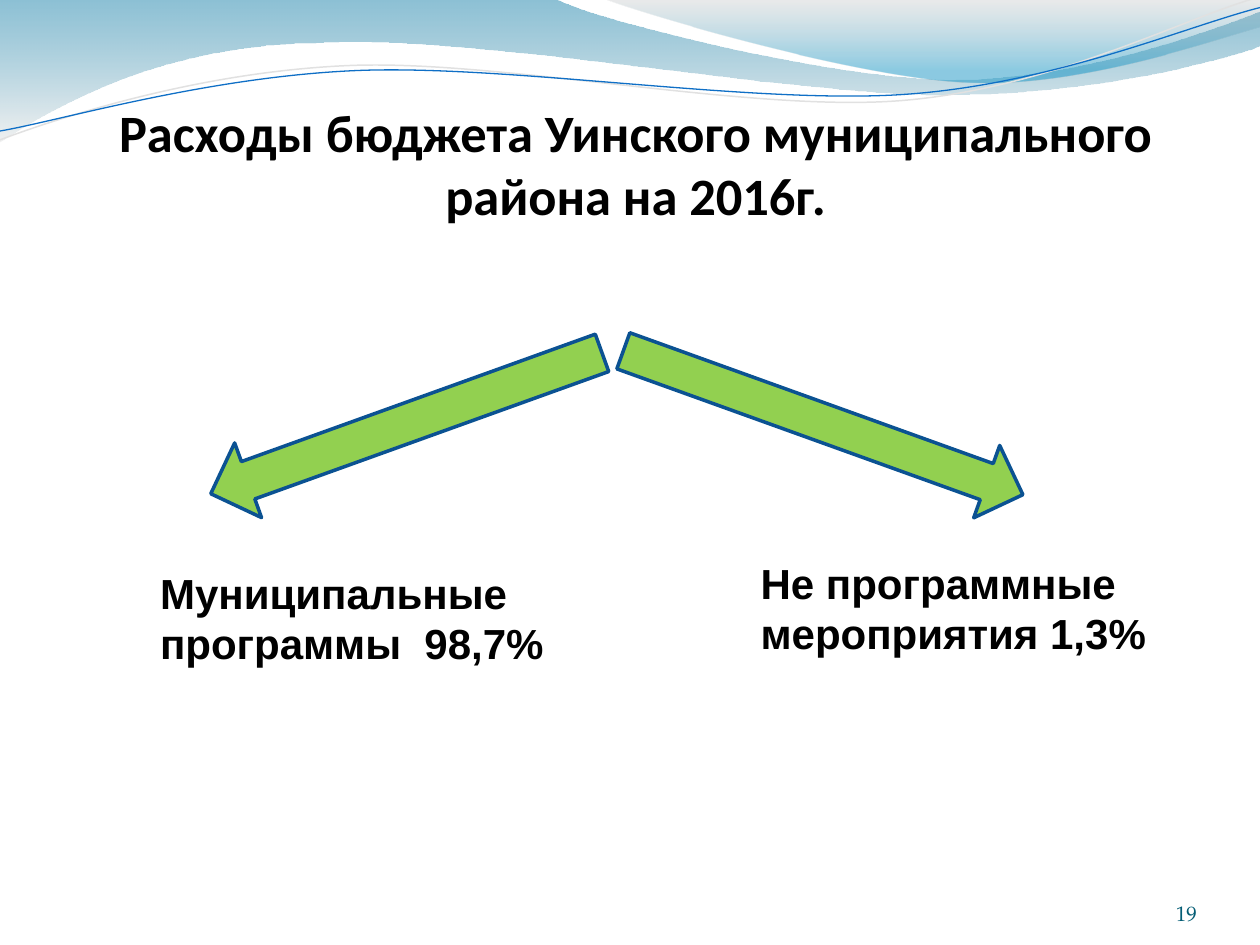
from math import cos, radians, sin

from pptx import Presentation
from pptx.dml.color import RGBColor
from pptx.enum.shapes import MSO_SHAPE
from pptx.enum.text import MSO_ANCHOR, MSO_AUTO_SIZE, PP_ALIGN
from pptx.oxml.ns import qn
from pptx.util import Inches, Pt
from lxml.etree import SubElement

COLORS = {
    "text": "000000", "number": "045D75",
    "arrow": "92D050", "arrow_line": "0B5292",
    "teal": "0074A1", "pale": "E7E7E7", "silver": "BDBDBD", "sky": "008BBF",
    "grey_line": "E1E1E1", "blue_line": "0F6FC6",
}
C = {name: RGBColor.from_string(value) for name, value in COLORS.items()}

prs = Presentation()
prs.slide_width, prs.slide_height = Inches(10), Inches(7.5)
COL, ROW = prs.slide_width / 100, prs.slide_height / 75  # grid of 100 x 75
s = prs.slides.add_slide(prs.slide_layouts[6])


def add_text(text, x, y, w, h, font="Arial", size=24, bold=True, color="text",
             align=PP_ALIGN.LEFT, anchor=MSO_ANCHOR.TOP, insets=(1, 0.5, 1, 0.5),
             fit=MSO_AUTO_SIZE.NONE):
    """Place a text box; position, size and insets are in grid units."""
    sp = s.shapes.add_textbox(int(x * COL), int(y * ROW), int(w * COL), int(h * ROW))
    tf = sp.text_frame
    tf.word_wrap, tf.vertical_anchor, tf.auto_size = True, anchor, fit
    tf.margin_left, tf.margin_top, tf.margin_right, tf.margin_bottom = (
        int(i * COL) for i in insets)
    p = tf.paragraphs[0]
    p.alignment = align
    r = p.add_run()
    r.text = text
    r.font.name, r.font.size, r.font.bold = font, Pt(size), bold
    r.font.color.rgb = C[color]


def add_wave(parts, close):
    """Draw a chain of straight (1 point) and Bezier (3 points) parts."""
    pts = [(x * COL, y * ROW) for part in parts for x, y in part]
    fb = s.shapes.build_freeform(*pts[0])
    fb.add_line_segments(pts[1:], close=close)
    sp = fb.convert_to_shape()
    sp.shadow.inherit = False
    segments = iter(list(sp._element.spPr.iter(qn("a:lnTo"))))
    for part in parts[1:]:
        first = next(segments)
        if len(part) == 3:
            first.tag = qn("a:cubicBezTo")
            for _ in range(2):
                extra = next(segments)
                first.append(extra[0])
                extra.getparent().remove(extra)
    return sp


# Header bands: outline, then (position, colour, opacity %) for both stops
bands = [
    ([[(0, -0.1)], [(44, -0.1)],
      [(47.6, 1.7), (66.4, 6.3), (75.8, 6.3)], [(85.3, 6.3), (95.8, 2.6), (100, 0.9)],
      [(100.1, 3.6)],
      [(98.3, 4.4), (87, 7.6), (74.6, 7.5)], [(62.2, 7.5), (38.2, 2.8), (25.7, 3.4)],
      [(12.9, 3.5), (4.6, 8.3), (-0.1, 11.3)], [(0, -0.1)]],
     [(0, "teal", 45), (1, "pale", 55)]),
    ([[(47.9, -0.1)],
      [(50.9, 1.1), (68.2, 6.2), (76.9, 6.5)], [(85.6, 6.9), (96.1, 3.2), (100, 2.1)],
      [(100, 0)], [(47.9, -0.1)]],
     [(0, "silver", 30), (0.8, "sky", 45)]),
]
for outline, stops in bands:
    sp = add_wave(outline, close=True)
    sp.line.fill.background()
    sp.fill.gradient()
    sp.fill.gradient_angle = 270
    for stop, (position, color, _) in zip(sp.fill.gradient_stops, stops):
        stop.position, stop.color.rgb = position, C[color]
    for clr, (_, _, opacity) in zip(sp._element.spPr.iter(qn("a:srgbClr")), stops):
        SubElement(clr, qn("a:alpha"), val=str(opacity * 1000))

# Header curves: drawn level about their centre, then tilted
TILT = 2.7
co, si = cos(radians(TILT)), sin(radians(TILT))
curves = [
    ([[(0, 11.1)], [(4.8, 9.3), (15.8, 5.7), (27.7, 5.2)],
      [(39.5, 4.7), (59.3, 8.9), (71.3, 8)], [(83.3, 7.1), (93.8, 1.5), (99.8, -0.2)]],
     (49.9, 5.75), "grey_line", 0.85),
    ([[(0, 10.4)], [(4.7, 9.6), (16.4, 6.1), (28.3, 5.6)],
      [(40.3, 5.1), (59.7, 8.3), (71.7, 7.5)], [(83.6, 6.7), (94.1, 2.1), (100, 0.6)]],
     (49.95, 5.9), "blue_line", 0.75),
]
for curve, (cx, cy), color, width in curves:
    level = [[(cx + (x - cx) * co - (y - cy) * si, cy + (x - cx) * si + (y - cy) * co)
              for x, y in part] for part in curve]
    sp = add_wave(level, close=False)
    sp.rotation = 360 - TILT
    sp.fill.background()
    sp.line.color.rgb, sp.line.width = C[color], Pt(width)

# Each kind of spending with the arrow leading to it
arrows = [(62.28, 16.7, 6.1, 33.7, 289.8), (29.1, 17.1, 6.3, 33, 70.2)]
for x, y, w, h, turn in arrows:
    sp = s.shapes.add_shape(MSO_SHAPE.DOWN_ARROW, int(x * COL), int(y * ROW),
                            int(w * COL), int(h * ROW))
    sp.rotation = turn
    sp.shadow.inherit = False
    sp.fill.solid()
    sp.fill.fore_color.rgb = C["arrow"]
    sp.line.color.rgb, sp.line.width = C["arrow_line"], Pt(2)

for text, x, y in [("Муниципальные программы  98,7%", 11.72, 44.53),
                   ("Не программные мероприятия 1,3%", 59.38, 43.75)]:
    add_text(text, x, y, 35.9, 9.1, fit=MSO_AUTO_SIZE.SHAPE_TO_FIT_TEXT)
add_text("19", 86.7, 69.5, 8.3, 4, font="TeX Gyre Pagella", size=12, bold=False,
         color="number", align=PP_ALIGN.RIGHT, anchor=MSO_ANCHOR.BOTTOM,
         insets=(0, 0, 0, 0))
add_text("Расходы бюджета Уинского муниципального района на 2016г.", 5.47, 7, 90, 10.9,
         font="Calibri", size=30, align=PP_ALIGN.CENTER, anchor=MSO_ANCHOR.BOTTOM,
         insets=(0, 0.5, 0, 0))

prs.save("out.pptx")
